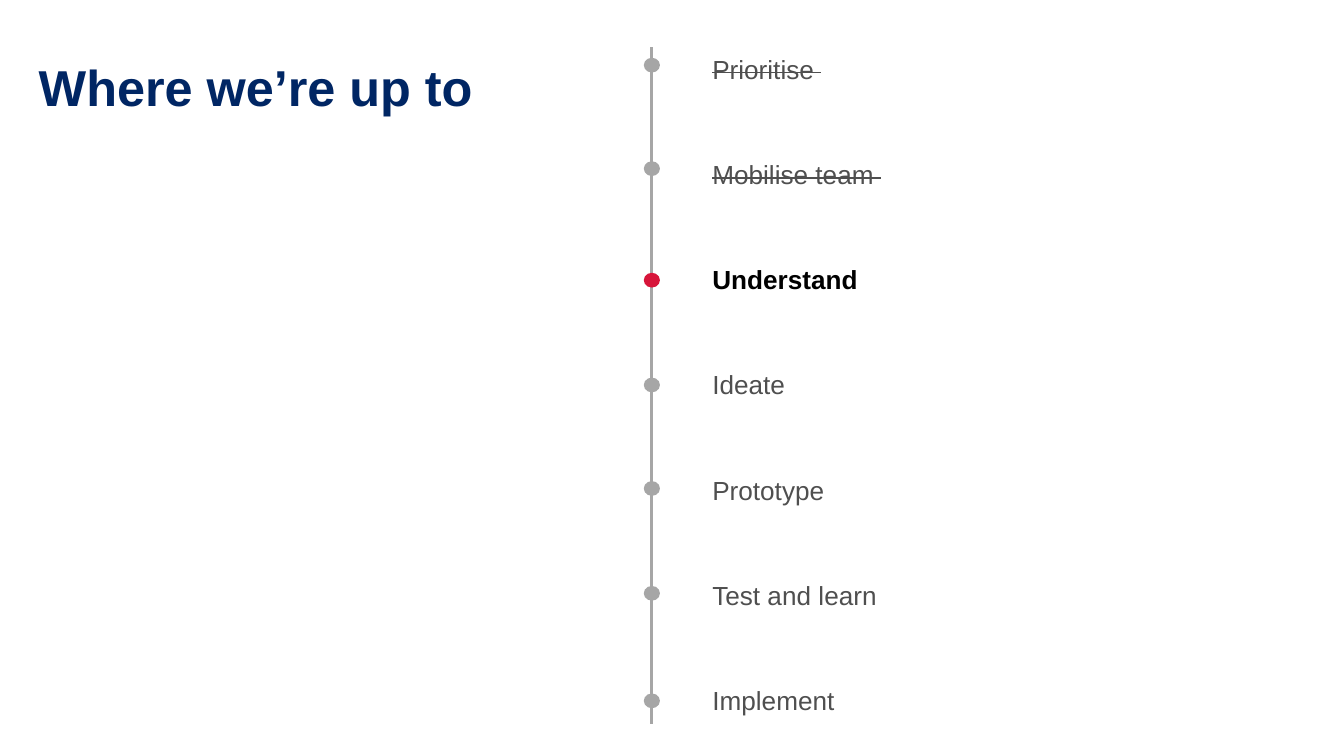
import pptx
import pptx.dml.color
import pptx.enum.shapes
import pptx.oxml
import pptx.oxml.ns
import pptx.util
from dataclasses import dataclass

Inches = pptx.util.Inches
Pt = pptx.util.Pt


@dataclass(frozen=True)
class Theme:
    font: str = "Arial"
    title_size: int = 27
    step_size: int = 14
    navy: str = "002664"
    red: str = "D7153A"
    grey: str = "A6A6A6"
    text: str = "4F4F4F"
    black: str = "000000"


THEME = Theme()
SLIDE_WIDTH = 10
SLIDE_HEIGHT = SLIDE_WIDTH * 9 / 16
LINE_X = 4.85
DOT_WIDTH, DOT_HEIGHT = 0.12, 0.11

# Label, state and top of the dot for each step
STEPS = [
    ("Prioritise ", "done", 0.43),
    ("Mobilise team ", "done", 1.2),
    ("Understand", "current", 2.03),
    ("Ideate", "next", 2.81),
    ("Prototype", "next", 3.58),
    ("Test and learn", "next", 4.36),
    ("Implement", "next", 5.16),
]


def rgb(value):
    return pptx.dml.color.RGBColor.from_string(value)


def style_span(span, size, color, bold=False):
    span.font.name = THEME.font
    span.font.size = Pt(size)
    span.font.bold = bold
    span.font.color.rgb = rgb(color)


def add_title(page, text):
    box = page.shapes.add_textbox(Inches(0.19), Inches(0.42), Inches(9.03), Inches(0.42))
    box.text_frame.word_wrap = True
    box.text_frame.text = text
    para = box.text_frame.paragraphs[0]
    para.line_spacing = 0.9
    style_span(para.runs[0], THEME.title_size, THEME.navy, bold=True)


def add_timeline(page):
    line = page.shapes.add_connector(
        pptx.enum.shapes.MSO_CONNECTOR.STRAIGHT,
        Inches(LINE_X), Inches(0.35), Inches(LINE_X), Inches(5.39))
    line.line.color.rgb = rgb(THEME.grey)
    line.line.width = Pt(1.5)
    properties = line._element.spPr
    properties.append(pptx.oxml.parse_xml(
        f'<a:effectLst {pptx.oxml.ns.nsdecls("a")}/>'))


def add_dot(page, top, color):
    dot = page.shapes.add_shape(
        pptx.enum.shapes.MSO_SHAPE.OVAL, Inches(LINE_X - DOT_WIDTH / 2), Inches(top),
        Inches(DOT_WIDTH), Inches(DOT_HEIGHT))
    dot.shadow.inherit = False
    dot.fill.solid()
    dot.fill.fore_color.rgb = rgb(color)
    dot.line.fill.background()


def add_step_labels(page):
    box = page.shapes.add_textbox(Inches(5.3), Inches(0.35), Inches(4.56), Inches(5.35))
    frame = box.text_frame
    frame.word_wrap = True
    frame.margin_left = frame.margin_right = frame.margin_top = frame.margin_bottom = 0
    frame.text = "\n".join(label for label, _, _ in STEPS)
    for para, (_, state, _) in zip(frame.paragraphs, STEPS):
        para.line_spacing = 1.2
        para.space_after = Pt(36.2)
        current = state == "current"
        span = para.runs[0]
        style_span(span, THEME.step_size, THEME.black if current else THEME.text, current)
        if state == "done":
            span.font._element.set("strike", "sngStrike")


def main():
    deck = pptx.Presentation()
    deck.slide_width, deck.slide_height = Inches(SLIDE_WIDTH), Inches(SLIDE_HEIGHT)
    page = deck.slides.add_slide(deck.slide_layouts[6])
    add_timeline(page)
    add_step_labels(page)
    add_title(page, "Where we’re up to")
    for _, state, top in STEPS:
        add_dot(page, top, THEME.red if state == "current" else THEME.grey)
    deck.save("out.pptx")


if __name__ == "__main__":
    main()
